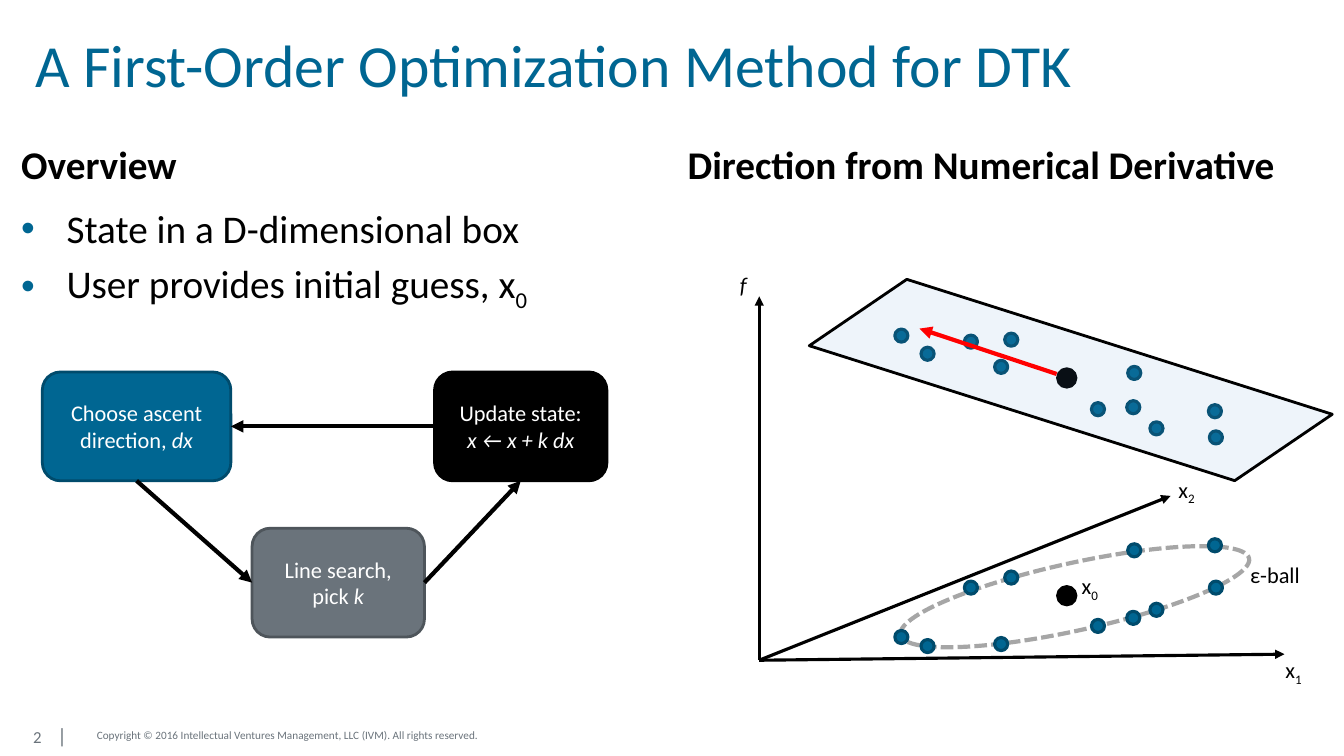
import pptx
import pptx.util
import pptx.dml.color
import pptx.enum.dml
import pptx.enum.shapes
import pptx.enum.text
import pptx.oxml
import pptx.oxml.ns

Inches = pptx.util.Inches
Pt = pptx.util.Pt
RGBColor = pptx.dml.color.RGBColor
SHAPE = pptx.enum.shapes.MSO_SHAPE
ANCHOR = pptx.enum.text.MSO_ANCHOR
ALIGN = pptx.enum.text.PP_ALIGN

FONT = "Calibri"
TEAL = RGBColor(0x00, 0x66, 0x92)
DARK_TEAL = RGBColor(0x00, 0x4B, 0x6C)
GRAY = RGBColor(0x6A, 0x73, 0x7B)
DARK_GRAY = RGBColor(0x4E, 0x55, 0x5B)
LIGHT_GRAY = RGBColor(0xA6, 0xA6, 0xA6)
PLANE_BLUE = RGBColor(0x5B, 0x9B, 0xD5)
BLACK = RGBColor(0x00, 0x00, 0x00)
WHITE = RGBColor(0xFF, 0xFF, 0xFF)
RED = RGBColor(0xFF, 0x00, 0x00)

# Sample points: x, height on the ε-ball, height on the plane
SAMPLES = [
    (2.5, 0.82, 3.18), (2.1, 0.72, 3.16), (1.41, 0.23, 3.22), (1.67, 0.14, 3.04),
    (2.4, 0.16, 2.91), (3.36, 0.34, 2.49), (3.71, 0.42, 2.51), (3.94, 0.5, 2.3),
    (4.53, 0.72, 2.21), (4.52, 1.14, 2.47), (3.72, 1.09, 2.85),
]


def a_element(tag, attrs="", inner=""):
    ns = pptx.oxml.ns.nsdecls("a")
    return pptx.oxml.parse_xml(f"<a:{tag} {ns} {attrs}>{inner}</a:{tag}>")


def add_runs(p, parts, size, color, bold=False):
    """Add (text, style) parts; style is "", "i" for italic or "sub" for subscript."""
    for text, style in parts:
        r = p.add_run()
        r.text = text
        r.font.name, r.font.size, r.font.bold = FONT, Pt(size), bold
        r.font.color.rgb = color
        r.font.italic = style == "i"
        if style == "sub":
            r.font._element.set("baseline", "-25000")


def add_label(s, x, y, w, h, parts, size=16, color=BLACK, wrap=False):
    tf = s.shapes.add_textbox(Inches(x), Inches(y), Inches(w), Inches(h)).text_frame
    tf.word_wrap = wrap
    add_runs(tf.paragraphs[0], parts, size, color)
    return tf


def add_figure(s, kind, x, y, w, h, fill, line, width, rotation=0):
    sp = s.shapes.add_shape(kind, Inches(x), Inches(y), Inches(w), Inches(h))
    sp.shadow.inherit = False
    sp.rotation = rotation
    if fill is None:
        sp.fill.background()
    else:
        sp.fill.solid()
        sp.fill.fore_color.rgb = fill
    sp.line.color.rgb = line
    sp.line.width = Pt(width)
    return sp


def add_arrow(s, start, end, color=BLACK, width=3):
    c = s.shapes.add_connector(pptx.enum.shapes.MSO_CONNECTOR.STRAIGHT,
                               *(Inches(v) for v in (*start, *end)))
    c.line.color.rgb = color
    c.line.width = Pt(width)
    c.line._get_or_add_ln().append(a_element("tailEnd", 'type="triangle"'))
    c._element.spPr.append(a_element("effectLst"))
    return c


def place(ph, x, y, w, h, anchor):
    ph.left, ph.top, ph.width, ph.height = (Inches(v) for v in (x, y, w, h))
    tf = ph.text_frame
    tf.word_wrap = True
    tf.auto_size = pptx.enum.text.MSO_AUTO_SIZE.NONE
    tf.vertical_anchor = anchor
    return tf


def fill_title(ph, text):
    p = place(ph, 0.25, 0.19, 12.97, 0.89, ANCHOR.MIDDLE).paragraphs[0]
    p.alignment = ALIGN.LEFT
    add_runs(p, [(text, "")], 42.7, TEAL)


def fill_heading(ph, x, y, text):
    p = place(ph, x, y, 6.5, 0.7, ANCHOR.BOTTOM).paragraphs[0]
    p.space_before = Pt(0)
    add_runs(p, [(text, "")], 28, BLACK, bold=True)


def fill_bullets(ph, x, y, w, h, items):
    tf = place(ph, x, y, w, h, ANCHOR.TOP)
    for i, parts in enumerate(items):
        p = tf.paragraphs[0] if i == 0 else tf.add_paragraph()
        p.space_before = Pt(5.6 if i else 0)
        pPr = p._p.get_or_add_pPr()
        pPr.set("marL", str(Inches(0.45)))
        pPr.set("indent", str(-Inches(0.45)))
        pPr.append(a_element("buClr", inner=f'<a:srgbClr val="{TEAL}"/>'))
        pPr.append(a_element("buFont", 'typeface="Arial"'))
        pPr.append(a_element("buChar", 'char="•"'))
        add_runs(p, parts, 28, BLACK)


def draw_cycle(s, x, y):
    """Three steps joined in a loop, with the top left corner at x, y."""
    steps = [
        (0, 0, 1.87, TEAL, DARK_TEAL, [[("Choose ascent direction, ", ""), ("dx", "i")]]),
        (2.08, 1.55, 1.71, GRAY, DARK_GRAY, [[("Line search, pick ", ""), ("k", "i")]]),
        (3.89, 0, 1.71, BLACK, BLACK, [[("Update state:", "")], [("x ← x + k dx", "i")]]),
    ]
    boxes = []
    for dx, dy, w, fill, line, lines in steps:
        sp = add_figure(s, SHAPE.ROUNDED_RECTANGLE, x + dx, y + dy, w, 1.08, fill, line, 2)
        tf = sp.text_frame
        tf.word_wrap = True
        tf.vertical_anchor = ANCHOR.MIDDLE
        for i, parts in enumerate(lines):
            p = tf.paragraphs[0] if i == 0 else tf.add_paragraph()
            p.alignment = ALIGN.CENTER
            add_runs(p, parts, 16, WHITE)
        boxes.append(sp)
    choose, search, update = boxes
    for a, side_a, b, side_b in [(choose, 2, search, 1), (search, 3, update, 2),
                                 (update, 1, choose, 3)]:
        c = add_arrow(s, (x, y), (x + 1, y + 1))
        c.begin_connect(a, side_a)
        c.end_connect(b, side_b)


def draw_derivative(s, x, y):
    """Axes, ε-ball and fitted plane around the origin x, y; heights count upwards."""
    def at(dx, up):
        return x + dx, y - up

    def centered(kind, dx, up, w, h, *style):
        cx, cy = at(dx, up)
        return add_figure(s, kind, cx - w / 2, cy - h / 2, w, h, *style)

    for tip in [(5.21, 0.06), (4.08, 1.63), (0, 3.61)]:
        add_arrow(s, (x, y), at(*tip), width=2.25)

    ball = centered(SHAPE.OVAL, 3.13, 0.63, 3.54, 0.67, None, LIGHT_GRAY, 3, -12.4)
    ball.line.dash_style = pptx.enum.dml.MSO_LINE.SQUARE_DOT
    for dx, *heights in SAMPLES:
        for up in heights:
            centered(SHAPE.OVAL, dx, up, 0.13, 0.13, TEAL, DARK_TEAL, 2.25)
    for up in (0.64, 2.8):
        centered(SHAPE.OVAL, 3.05, up, 0.18, 0.18, BLACK, BLACK, 2.25)

    plane = centered(SHAPE.PARALLELOGRAM, 3.09, 2.78, 5.15, 0.92, PLANE_BLUE, BLACK, 2, 17.6)
    plane.adjustments[0] = 0.786
    color = plane.fill._xPr.find(".//" + pptx.oxml.ns.qn("a:srgbClr"))
    color.append(a_element("alpha", 'val="10000"'))
    add_arrow(s, at(2.95, 2.84), at(1.59, 3.29), RED)

    for dx, up, w, parts in [
        (5.12, 0.09, 0.37, [("x", ""), ("1", "sub")]),
        (4.06, 1.88, 0.37, [("x", ""), ("2", "sub")]),
        (-0.29, 3.91, 0.27, [("f", "i")]),
        (4.77, 1.03, 0.7, [("ε-ball", "")]),
        (3.1, 0.92, 0.47, [("x", ""), ("0", "sub")]),
    ]:
        add_label(s, *at(dx, up), w, 0.37, parts)


def draw_footer(s, x, y):
    number = add_label(s, x, y, 0.74, 0.55, [("2\t", "")], 12, GRAY)
    p = number.paragraphs[0]
    tabs = f'<a:tab pos="{Inches(0.24)}" algn="l"/>'
    p._p.get_or_add_pPr().append(a_element("tabLst", inner=tabs))
    add_runs(p, [("|", "")], 14.7, GRAY)
    notice = add_label(s, x + 0.63, y + 0.14, 4.22, 0.27, [(
        "Copyright © 2016 Intellectual Ventures Management, LLC (IVM). All rights reserved.",
        "")], 8, GRAY, wrap=True)
    for tf in (number, notice):
        tf.vertical_anchor = ANCHOR.MIDDLE
        tf.margin_left = tf.margin_right = Inches(0.07)
        tf.margin_top = tf.margin_bottom = Inches(0.04)


def main():
    prs = pptx.Presentation()
    prs.slide_width, prs.slide_height = Inches(13.33), Inches(7.5)
    s = prs.slides.add_slide(prs.slide_layouts[4])
    title, left_heading, bullets, right_heading, unused = s.placeholders
    unused._element.getparent().remove(unused._element)

    draw_footer(s, 0.26, 7.02)
    fill_title(title, "A First-Order Optimization Method for DTK")
    fill_heading(left_heading, 0.11, 1.21, "Overview")
    fill_bullets(bullets, 0.11, 1.98, 6.5, 4.72, [
        [("State in a D-dimensional box", "")],
        [("User provides initial guess, x", ""), ("0", "sub")],
    ])
    fill_heading(right_heading, 6.72, 1.21, "Direction from Numerical Derivative")
    draw_cycle(s, 0.42, 3.69)
    draw_derivative(s, 7.53, 6.55)
    prs.save("out.pptx")


if __name__ == "__main__":
    main()
